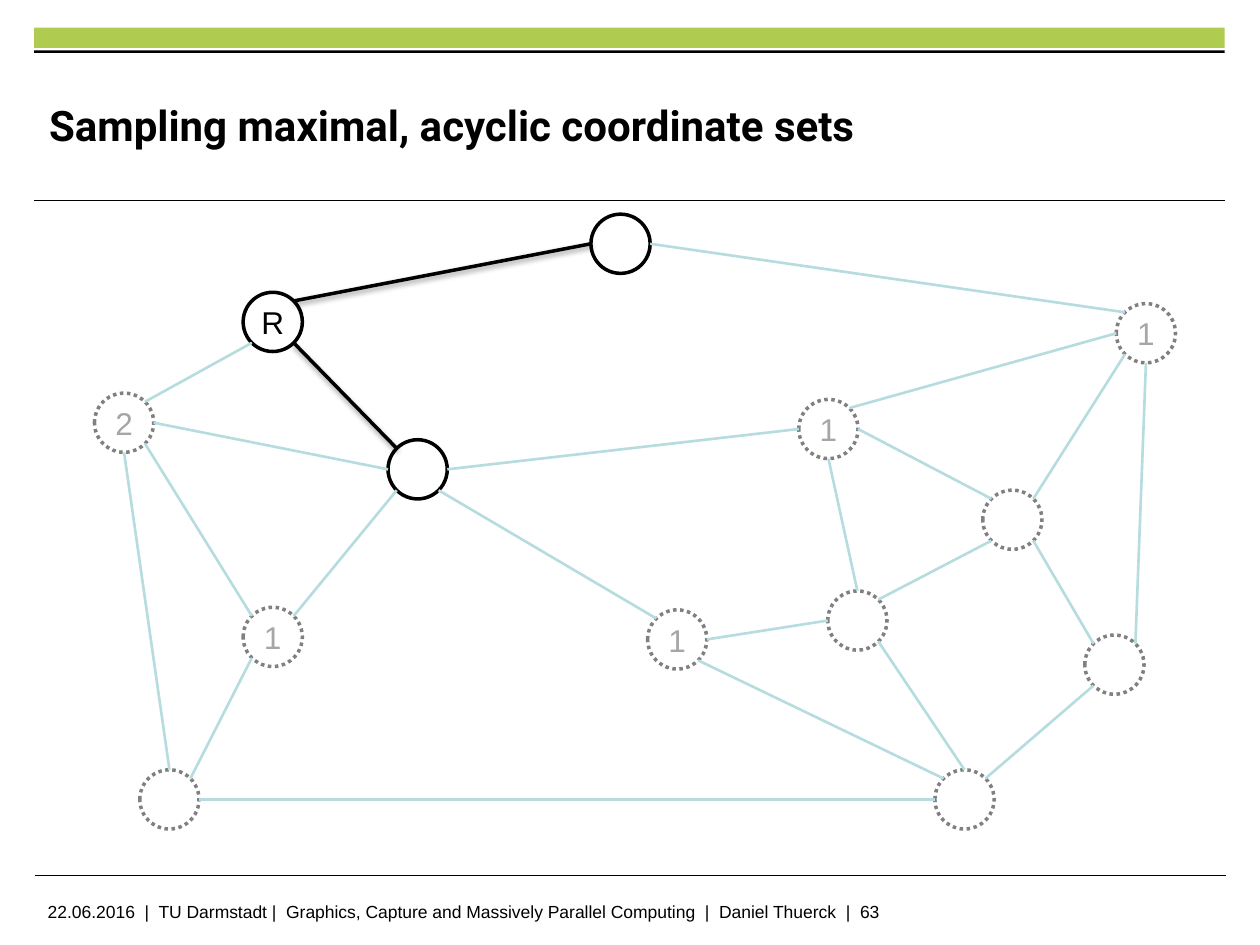
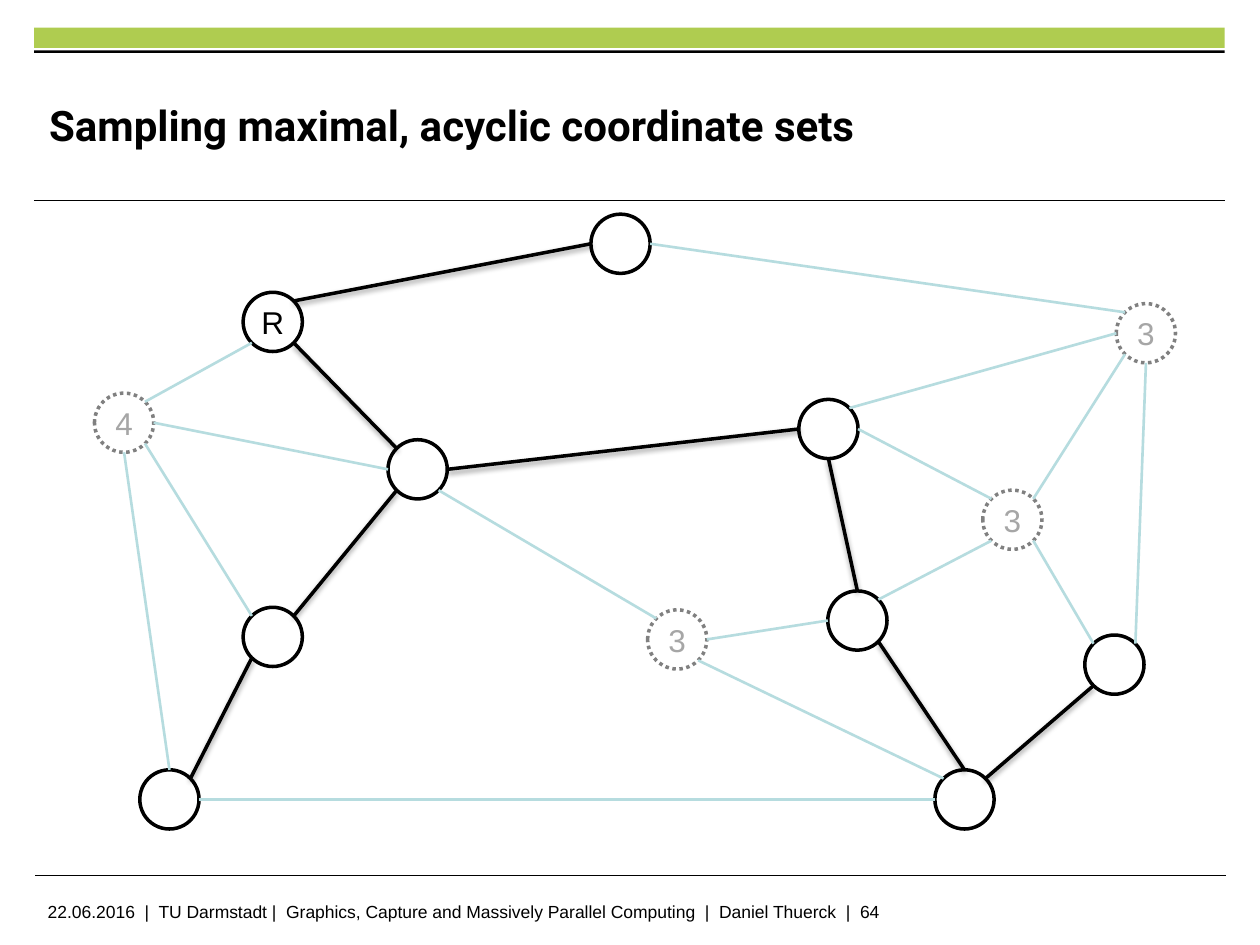
"""Build two slides that show an acyclic coordinate set growing in a graph."""
from dataclasses import dataclass
from math import cos, radians, sin

from lxml.etree import SubElement
from pptx import Presentation
from pptx.dml.color import RGBColor
from pptx.enum.dml import MSO_LINE
from pptx.enum.shapes import MSO_CONNECTOR, MSO_SHAPE
from pptx.enum.text import MSO_ANCHOR, PP_ALIGN
from pptx.oxml.ns import qn
from pptx.util import Inches, Pt


@dataclass(frozen=True)
class Theme:
    """Colours, fonts and sizes shared by the slides."""
    black: RGBColor = RGBColor(0, 0, 0)
    white: RGBColor = RGBColor(255, 255, 255)
    band: RGBColor = RGBColor(0xAF, 0xCC, 0x50)
    open_edge: RGBColor = RGBColor(0xB6, 0xDC, 0xDF)
    open_node: RGBColor = RGBColor(0x80, 0x80, 0x80)
    open_label: RGBColor = RGBColor(0xA6, 0xA6, 0xA6)
    title_font: str = "Roboto"
    body_font: str = "Arial"
    title_size: float = 24
    label_size: float = 18
    footer_size: float = 10
    rule_width: float = 0.6
    open_width: float = 1.5
    tree_width: float = 2


THEME = Theme()
TITLE = "Sampling maximal, acyclic coordinate sets"
FOOTER = ("22.06.2016  |  TU Darmstadt |  Graphics, Capture and Massively "
          "Parallel Computing  |  Daniel Thuerck  |  {}")
NODE_SIZE = 0.47
NODES = {
    "west": (0.75, 3.12), "southwest": (1.11, 6.11), "lower": (1.93, 4.82),
    "hub": (3.08, 3.49), "root": (1.93, 2.32), "top": (4.69, 1.7),
    "northeast": (8.86, 2.41), "bridge": (6.34, 3.17), "south": (7.42, 6.11),
    "southeast": (8.61, 5.04), "east": (7.8, 3.89), "inner": (6.57, 4.69),
    "middle": (5.14, 4.84),
}
ANGLES = {"e": 0, "se": 45, "s": 90, "sw": 135, "w": 180, "nw": 225, "n": 270, "ne": 315}
EDGES = [
    ("west", "ne", "root", "sw"), ("root", "ne", "top", "w"),
    ("west", "e", "hub", "w"), ("root", "se", "hub", "nw"),
    ("hub", "e", "bridge", "w"), ("top", "e", "northeast", "nw"),
    ("bridge", "ne", "northeast", "w"), ("west", "s", "southwest", "n"),
    ("west", "se", "lower", "nw"), ("lower", "sw", "southwest", "ne"),
    ("lower", "ne", "hub", "sw"), ("middle", "e", "inner", "w"),
    ("hub", "se", "middle", "nw"), ("bridge", "s", "inner", "n"),
    ("bridge", "e", "east", "nw"), ("east", "sw", "inner", "ne"),
    ("southwest", "e", "south", "w"), ("south", "ne", "southeast", "sw"),
    ("northeast", "s", "southeast", "ne"), ("inner", "se", "south", "n"),
    ("east", "se", "southeast", "nw"), ("middle", "se", "south", "nw"),
    ("east", "ne", "northeast", "sw"),
]
FIRST_TREE = {("root", "top"), ("root", "hub")}
GROWN_TREE = FIRST_TREE | {
    ("hub", "bridge"), ("lower", "southwest"), ("lower", "hub"),
    ("bridge", "inner"), ("south", "southeast"), ("inner", "south"),
}
STEPS = [
    (63, FIRST_TREE, {"root": "R", "west": "2", "lower": "1", "northeast": "1",
                      "bridge": "1", "middle": "1"}),
    (64, GROWN_TREE, {"root": "R", "west": "4", "northeast": "3", "east": "3",
                      "middle": "3"}),
]


def style_text(paragraph, font_name, size, color, bold=False):
    """Format every run of a paragraph."""
    for run in paragraph.runs:
        run.font.name = font_name
        run.font.size = Pt(size)
        run.font.color.rgb = color
        run.font.bold = bold


def clear_margins(text_frame):
    """Remove the insets and centre the text vertically."""
    text_frame.margin_left = text_frame.margin_right = 0
    text_frame.margin_top = text_frame.margin_bottom = 0
    text_frame.vertical_anchor = MSO_ANCHOR.MIDDLE


def add_bar(slide, top, height, color):
    """Add a filled bar across the slide."""
    bar = slide.shapes.add_shape(
        MSO_SHAPE.RECTANGLE, Inches(0.27), Inches(top), Inches(9.45), Inches(height))
    bar.shadow.inherit = False
    bar.fill.solid()
    bar.fill.fore_color.rgb = color
    bar.line.fill.background()


def add_line(slide, start, end, color, width, shadowed=False):
    """Add a straight line, with a soft shadow below it if asked."""
    connector = slide.shapes.add_connector(
        MSO_CONNECTOR.STRAIGHT, *(Inches(value) for value in (*start, *end)))
    connector.line.color.rgb = color
    connector.line.width = Pt(width)
    effects = SubElement(connector.element.spPr, qn("a:effectLst"))
    if shadowed:
        shadow = SubElement(effects, qn("a:outerShdw"), blurRad="40000",
                            dist="20000", dir="5400000", rotWithShape="0")
        shadow_color = SubElement(shadow, qn("a:srgbClr"), val=str(THEME.black))
        SubElement(shadow_color, qn("a:alpha"), val="38000")


def add_frame(slide, number):
    """Add the band, the rules and the footer."""
    add_bar(slide, 0.22, 0.16, THEME.band)
    add_bar(slide, 0.4, 0.02, THEME.black)
    for left, top in ((0.27, 1.59), (0.28, 6.95)):
        add_line(slide, (left, top), (left + 9.45, top), THEME.black, THEME.rule_width)
    footer = slide.shapes.add_textbox(Inches(0.28), Inches(7.1), Inches(7.88), Inches(0.25))
    footer.text_frame.word_wrap = True
    paragraph = footer.text_frame.paragraphs[0]
    paragraph.text = FOOTER.format(number)
    style_text(paragraph, THEME.body_font, THEME.footer_size, THEME.black)


def set_title(slide):
    """Place and format the title."""
    title = slide.shapes.title
    title.left, title.top = Inches(0.39), Inches(0.53)
    title.width, title.height = Inches(7.26), Inches(0.92)
    clear_margins(title.text_frame)
    paragraph = title.text_frame.paragraphs[0]
    paragraph.text = TITLE
    paragraph.alignment = PP_ALIGN.LEFT
    style_text(paragraph, THEME.title_font, THEME.title_size, THEME.black, bold=True)


def add_node(slide, name, label, in_tree):
    """Add a graph node, solid inside the tree and dotted outside."""
    left, top = NODES[name]
    node = slide.shapes.add_shape(
        MSO_SHAPE.OVAL, Inches(left), Inches(top), Inches(NODE_SIZE), Inches(NODE_SIZE))
    node.shadow.inherit = False
    node.line.width = Pt(THEME.tree_width)
    if in_tree:
        node.fill.solid()
        node.fill.fore_color.rgb = THEME.white
        node.line.color.rgb = THEME.black
    else:
        node.fill.background()
        node.line.color.rgb = THEME.open_node
        node.line.dash_style = MSO_LINE.ROUND_DOT
    if label:
        clear_margins(node.text_frame)
        node.text_frame.word_wrap = False
        paragraph = node.text_frame.paragraphs[0]
        paragraph.text = label
        paragraph.alignment = PP_ALIGN.CENTER
        color = THEME.black if in_tree else THEME.open_label
        style_text(paragraph, THEME.body_font, THEME.label_size, color)


def node_site(name, side):
    """Return the point on a node's rim at a compass side."""
    left, top = NODES[name]
    radius = NODE_SIZE / 2
    angle = radians(ANGLES[side])
    return left + radius * (1 + cos(angle)), top + radius * (1 + sin(angle))


def add_graph(slide, tree, labels):
    """Add all nodes and edges, with the tree emphasised."""
    tree_nodes = {name for edge in tree for name in edge}
    for name in NODES:
        add_node(slide, name, labels.get(name), name in tree_nodes)
    for start, start_side, end, end_side in EDGES:
        in_tree = (start, end) in tree
        color = THEME.black if in_tree else THEME.open_edge
        width = THEME.tree_width if in_tree else THEME.open_width
        add_line(slide, node_site(start, start_side), node_site(end, end_side),
                 color, width, shadowed=in_tree)


def main():
    """Build and save the presentation."""
    presentation = Presentation()
    presentation.slide_width, presentation.slide_height = Inches(10), Inches(7.5)
    title_only = presentation.slide_layouts[5]
    for number, tree, labels in STEPS:
        slide = presentation.slides.add_slide(title_only)
        add_frame(slide, number)
        set_title(slide)
        add_graph(slide, tree, labels)
    presentation.save("out.pptx")


if __name__ == "__main__":
    main()
